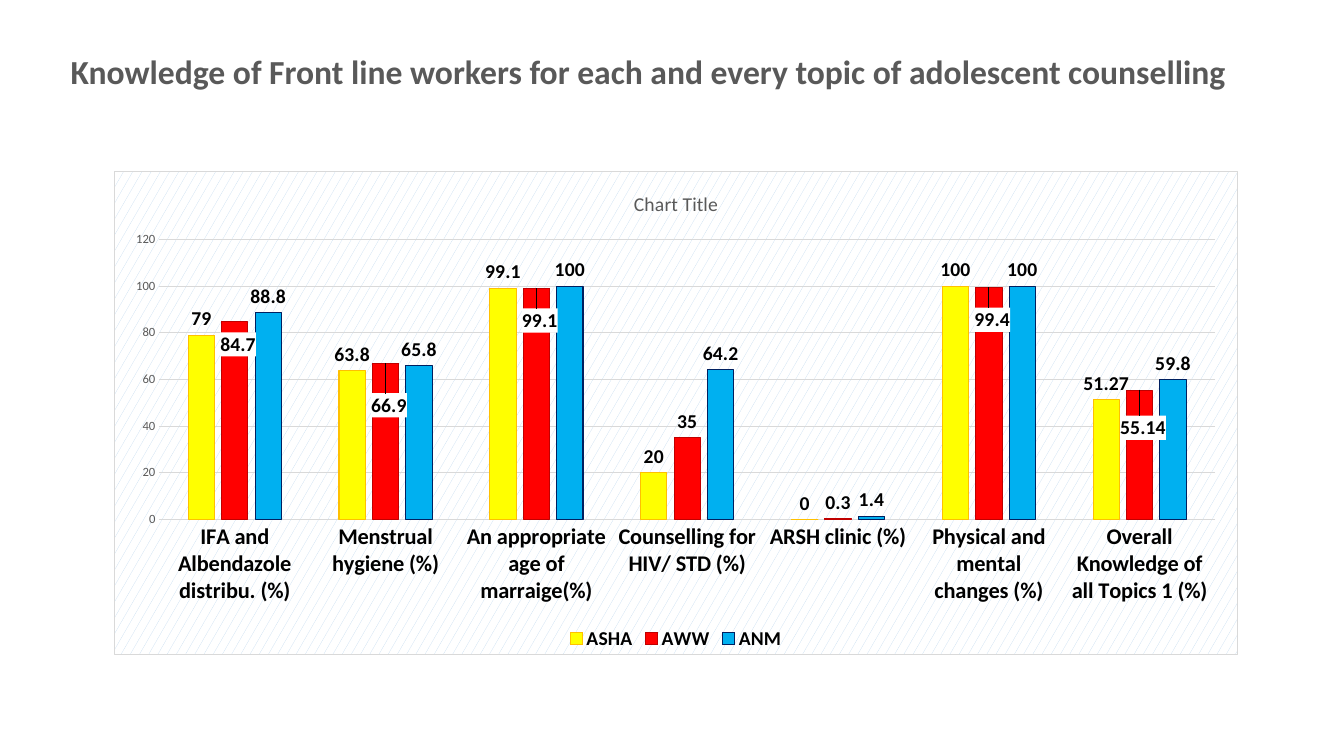
from lxml import etree
from pptx import Presentation, util as u
from pptx.chart.data import CategoryChartData
from pptx.dml.color import RGBColor
from pptx.enum import chart as ch, text
from pptx.oxml import parse_xml
from pptx.oxml.ns import nsdecls, qn

TOPICS = [
    "IFA and Albendazole distribu. (%)", "Menstrual hygiene (%)",
    "An appropriate age of marraige(%)", "Counselling for HIV/ STD (%)",
    "ARSH clinic (%)", "Physical and mental changes (%)",
    "Overall Knowledge of all Topics 1 (%)",
]
# worker: (values, fill, outline)
WORKERS = {
    "ASHA": ([79, 63.8, 99.1, 20, 0, 100, 51.27], "FFFF00", "FFC000"),
    "AWW": ([84.7, 66.9, 99.1, 35, 0.3, 99.4, 55.14], "FF0000", "C00000"),
    "ANM": ([88.8, 65.8, 100, 64.2, 1.4, 100, 59.8], "00B0F0", "002060"),
}
# AWW labels moved down onto their bars: topic index -> share of chart height
LOWERED = {0: 0.08, 1: 0.12, 2: 0.1, 5: 0.1, 6: 0.11}


def rgb(value):
    return RGBColor.from_string(value)


def manual_layout(**parts):
    """Chart layout element; parts are given in schema order."""
    layout = etree.Element(qn("c:layout"))
    manual = etree.SubElement(layout, qn("c:manualLayout"))
    for name, value in parts.items():
        etree.SubElement(manual, qn(f"c:{name}")).set("val", str(value))
    return layout


class SlideBuilder:
    FONT = "Calibri"
    GREY, BLACK, RULE = "595959", "000000", "D9D9D9"

    def __init__(self, prs):
        self.s = prs.slides.add_slide(prs.slide_layouts[5])

    def style(self, font, size, color, bold=False):
        font.name, font.size, font.bold = self.FONT, u.Pt(size), bold
        font.color.rgb = rgb(color)

    def line(self, line, color):
        line.color.rgb = rgb(color)
        line.width = u.Pt(0.75)

    def title(self, words, left, top, width, height):
        sp = self.s.shapes.title
        sp.left, sp.top, sp.width, sp.height = map(u.Inches, (left, top, width, height))
        tf = sp.text_frame
        tf.text = words
        tf.word_wrap = False
        tf.vertical_anchor = text.MSO_ANCHOR.MIDDLE
        p = tf.paragraphs[0]
        p.alignment = text.PP_ALIGN.CENTER
        self.style(p.font, 24, self.GREY, True)

    def column_chart(self, heading, left, top, width, height):
        data = CategoryChartData()
        data.categories = TOPICS
        for name, (values, _, _) in WORKERS.items():
            data.add_series(name, values)
        chart = self.s.shapes.add_chart(
            ch.XL_CHART_TYPE.COLUMN_CLUSTERED,
            *map(u.Inches, (left, top, width, height)), data).chart
        self.style(chart.font, 10, self.BLACK)

        # Heading and legend
        tf = chart.chart_title.text_frame
        tf.text = heading
        self.style(tf.paragraphs[0].font, 14, self.GREY)
        chart.has_legend = True
        chart.legend.position = ch.XL_LEGEND_POSITION.BOTTOM
        chart.legend.include_in_layout = False
        self.style(chart.legend.font, 14, self.BLACK, True)

        self.axes(chart)
        self.columns(chart.plots[0])
        self.chart_area(chart)

    def axes(self, chart):
        cat, val = chart.category_axis, chart.value_axis
        for axis in (cat, val):
            axis.major_tick_mark = axis.minor_tick_mark = ch.XL_TICK_MARK.NONE
        self.style(cat.tick_labels.font, 16, self.BLACK, True)
        self.line(cat.format.line, self.RULE)
        val.minimum_scale, val.maximum_scale, val.major_unit = 0, 120, 20
        self.style(val.tick_labels.font, 9, self.GREY)
        val.format.line.fill.background()
        self.line(val.major_gridlines.format.line, self.RULE)

    def columns(self, plot):
        plot.gap_width, plot.overlap = 219, -27
        plot.vary_by_categories = False
        for series in plot.series:
            _, fill, outline = WORKERS[series.name]
            series.format.fill.solid()
            series.format.fill.fore_color.rgb = rgb(fill)
            self.line(series.format.line, outline)
            labels = series.data_labels
            labels.show_value = True
            labels.position = ch.XL_LABEL_POSITION.OUTSIDE_END
            self.style(labels.font, 14, self.BLACK, True)
            if series.name == "AWW":
                for idx, drop in LOWERED.items():
                    self.lowered_label(series, idx, drop)

    def lowered_label(self, series, idx, drop):
        label = series.points[idx].data_label
        self.style(label.font, 14, self.BLACK, True)
        label.position = ch.XL_LABEL_POSITION.OUTSIDE_END
        # White backing and offset
        node = series.data_labels._element.xpath(f"c:dLbl[c:idx/@val='{idx}']")[0]
        for old in node.findall(qn("c:spPr")):
            node.remove(old)
        backing = parse_xml(
            f'<c:spPr {nsdecls("c", "a")}><a:solidFill><a:srgbClr val="FFFFFF"/>'
            '</a:solidFill></c:spPr>')
        node.find(qn("c:idx")).addnext(backing)
        backing.addprevious(manual_layout(x=0.003, y=drop))

    def chart_area(self, chart):
        space = chart._chartSpace
        # Hatched background with a thin border
        space.find(qn("c:chart")).addnext(parse_xml(
            f'<c:spPr {nsdecls("c", "a")}><a:pattFill prst="smConfetti">'
            '<a:fgClr><a:srgbClr val="BDD7EE"/></a:fgClr>'
            '<a:bgClr><a:srgbClr val="FFFFFF"/></a:bgClr></a:pattFill>'
            f'<a:ln w="9525"><a:solidFill><a:srgbClr val="{self.RULE}"/>'
            '</a:solidFill></a:ln></c:spPr>'))
        # Plot position as shares of the chart
        plot_area = space.find(".//" + qn("c:plotArea"))
        for old in plot_area.findall(qn("c:layout")):
            plot_area.remove(old)
        plot_area.insert(0, manual_layout(
            layoutTarget="inner", xMode="edge", yMode="edge",
            x=0.04, y=0.14, w=0.94, h=0.58))


def main():
    prs = Presentation()
    prs.slide_width, prs.slide_height = u.Inches(13.33), u.Inches(7.5)
    slide = SlideBuilder(prs)
    slide.title("Knowledge of Front line workers for each and every topic of "
                "adolescent counselling", 0.58, 0.45, 11.7, 0.5)
    slide.column_chart("Chart Title", 1.13, 1.7, 11.15, 4.8)
    prs.save("out.pptx")


if __name__ == "__main__":
    main()
